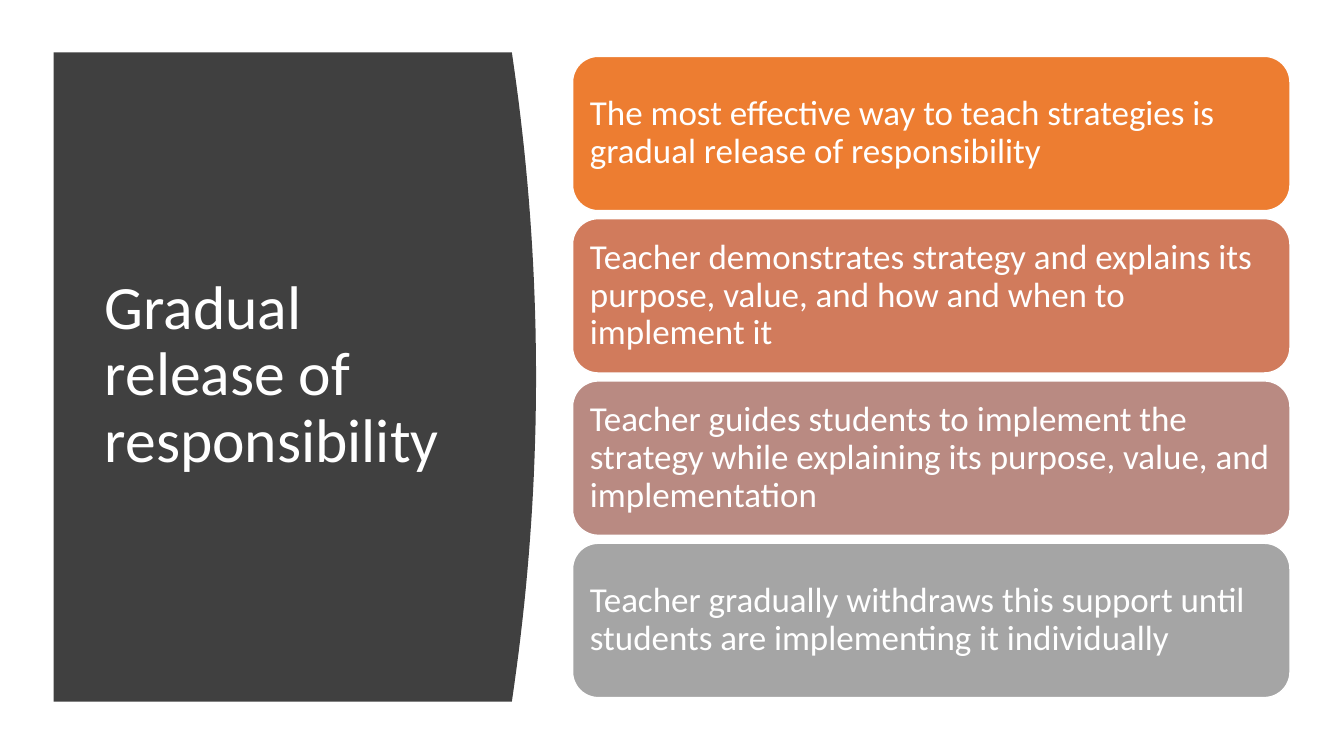
import pptx
import pptx.util
import pptx.dml.color
import pptx.enum.shapes
import pptx.enum.text

Cm = pptx.util.Cm
Pt = pptx.util.Pt


def color(hex_string):
    return pptx.dml.color.RGBColor.from_string(hex_string)


def write_text(box, text, size):
    frame = box.text_frame
    frame.word_wrap = True
    frame.vertical_anchor = pptx.enum.text.MSO_ANCHOR.MIDDLE
    para = frame.paragraphs[0]
    para.alignment = pptx.enum.text.PP_ALIGN.LEFT
    para.line_spacing = 0.9
    span = para.add_run()
    span.text = text
    span.font.name = "Calibri"
    span.font.size = Pt(size)
    span.font.color.rgb = color("FFFFFF")


deck = pptx.Presentation()
deck.slide_width = Cm(33.87)
deck.slide_height = Cm(19.05)
page = deck.slides.add_slide(deck.slide_layouts[6])

panel_left, panel_top, panel_edge = 1.35, 1.32, 12.9
panel_height, bulge, steps = 16.36, 0.61, 40
outline = []
for step in range(steps + 1):
    offset = 2 * step / steps - 1
    x = panel_edge + bulge * (1 - offset ** 2)
    y = panel_top + panel_height * step / steps
    outline.append((Cm(x), Cm(y)))
outline.append((Cm(panel_left), Cm(panel_top + panel_height)))

builder = page.shapes.build_freeform(Cm(panel_left), Cm(panel_top))
builder.add_line_segments(outline, close=True)
panel = builder.convert_to_shape()
panel.shadow.inherit = False
panel.fill.solid()
panel.fill.fore_color.rgb = color("404040")
panel.line.fill.background()

title = page.shapes.add_textbox(Cm(2.39), Cm(2.82), Cm(9.5), Cm(13.31))
write_text(title, "Gradual release of responsibility", 44)

cards = [
    ("ED7D31", "The most effective way to teach strategies is gradual release of responsibility"),
    ("D17B5C", "Teacher demonstrates strategy and explains its purpose, value, and how and when to implement it"),
    ("B98A82", "Teacher guides students to implement the strategy while explaining its purpose, value, and implementation"),
    ("A5A5A5", "Teacher gradually withdraws this support until students are implementing it individually"),
]
for index, (fill, text) in enumerate(cards):
    card = page.shapes.add_shape(
        pptx.enum.shapes.MSO_SHAPE.ROUNDED_RECTANGLE,
        Cm(14.43), Cm(1.42 + 4.09 * index), Cm(18.08), Cm(3.89))
    card.shadow.inherit = False
    card.fill.solid()
    card.fill.fore_color.rgb = color(fill)
    card.line.color.rgb = color("FFFFFF")
    card.line.width = Pt(1)
    card.text_frame.margin_left = card.text_frame.margin_right = Cm(0.25)
    card.text_frame.margin_top = card.text_frame.margin_bottom = Cm(0.25)
    write_text(card, text, 25)

deck.save("out.pptx")
